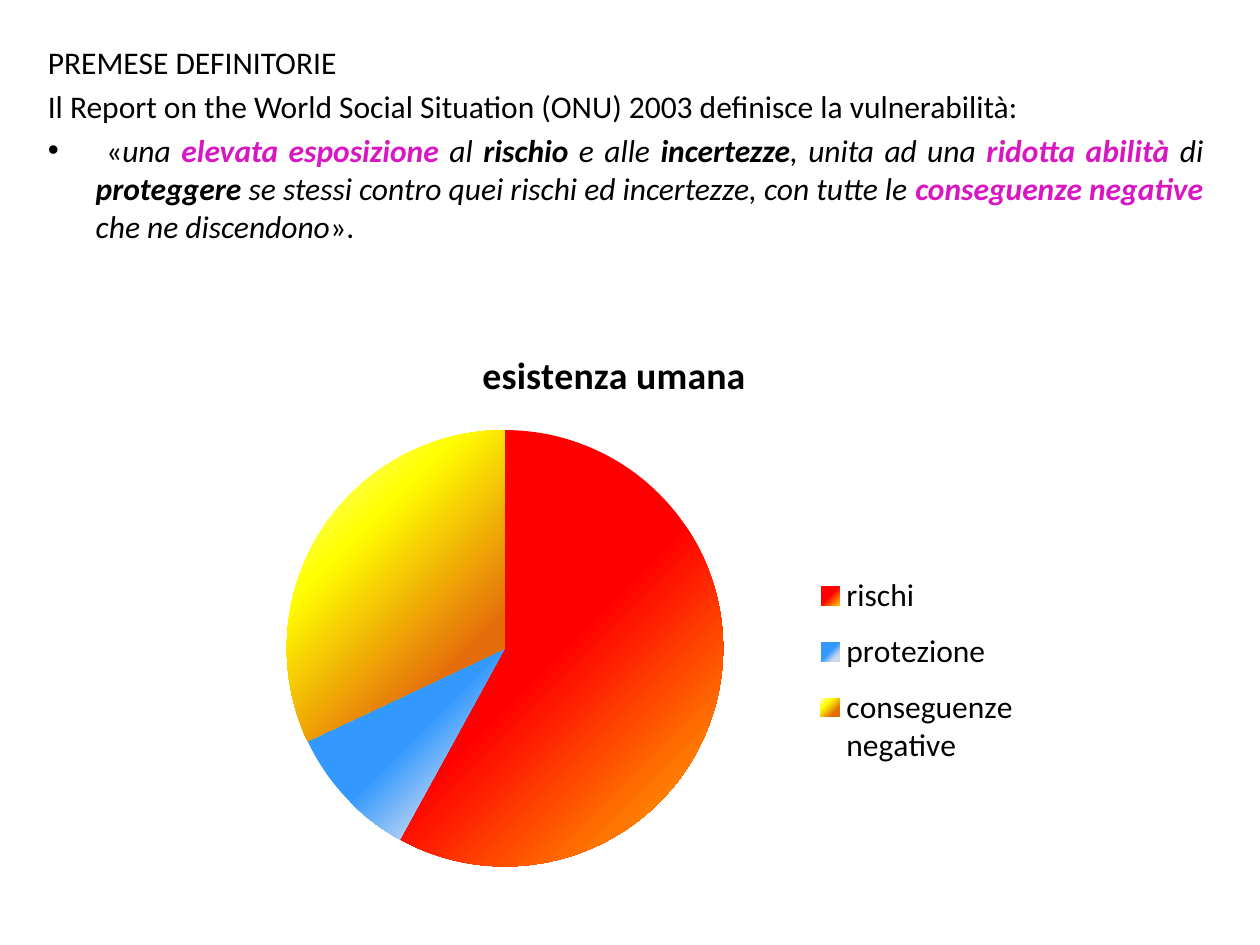
from lxml import etree
from pptx import Presentation
from pptx.chart.data import CategoryChartData
from pptx.dml.color import RGBColor
from pptx.enum.chart import XL_CHART_TYPE, XL_LEGEND_POSITION
from pptx.enum.text import MSO_ANCHOR, MSO_AUTO_SIZE, PP_ALIGN
from pptx.oxml.ns import qn
from pptx.util import Inches, Pt

PIE = XL_CHART_TYPE.PIE
RIGHT = XL_LEGEND_POSITION.RIGHT
JUSTIFY = PP_ALIGN.JUSTIFY
TOP = MSO_ANCHOR.TOP
NO_AUTOFIT = MSO_AUTO_SIZE.NONE

FONT = "Calibri"
BLACK = RGBColor(0x00, 0x00, 0x00)
MAGENTA = RGBColor(0xD9, 0x17, 0xC2)
RED = RGBColor(0xFF, 0x00, 0x00)
AMBER = RGBColor(0xFF, 0xC0, 0x00)
BLUE = RGBColor(0x33, 0x99, 0xFF)
PALE_BLUE = RGBColor(0xC6, 0xD9, 0xF1)
PALE_YELLOW = RGBColor(0xFF, 0xFF, 0x99)
YELLOW = RGBColor(0xFF, 0xFF, 0x00)
ORANGE = RGBColor(0xE4, 0x6C, 0x0A)

# Run styles: (italic, bold, colour)
PLAIN = (False, False, BLACK)
QUOTE = (True, False, BLACK)
STRONG = (True, True, BLACK)
KEY = (True, True, MAGENTA)

HEADING = [("PREMESE DEFINITORIE", PLAIN)]
INTRO = [("Il Report on the World Social Situation (ONU) 2003 definisce la vulnerabilità:", PLAIN)]
DEFINITION = [
    (" «", PLAIN),
    ("una ", QUOTE),
    ("elevata esposizione ", KEY),
    ("al ", QUOTE),
    ("rischio", STRONG),
    (" e alle ", QUOTE),
    ("incertezze", STRONG),
    (", unita ad una ", QUOTE),
    ("ridotta abilità ", KEY),
    ("di ", QUOTE),
    ("proteggere", STRONG),
    (" se stessi contro quei rischi ed incertezze, con tutte le ", QUOTE),
    ("conseguenze negative", KEY),
    (" che ne discendono", QUOTE),
    ("».", PLAIN),
]

CHART_TITLE = "esistenza umana"
# Slices: category, value, gradient stops (percent, colour)
SLICES = [
    ("rischi", 58, [(50, RED), (100, AMBER)]),
    ("protezione", 10, [(50, BLUE), (79, PALE_BLUE)]),
    ("conseguenze negative", 32, [(7, PALE_YELLOW), (33, YELLOW), (77, ORANGE)]),
]


def style_font(font, size, bold=False, italic=False, color=BLACK):
    font.name = FONT
    font.size = Pt(size)
    font.bold = bold
    font.italic = italic
    font.color.rgb = color


def set_bullet(paragraph, bullet):
    props = paragraph._p.get_or_add_pPr()
    indent = Inches(0.38) if bullet else 0
    props.set("marL", str(indent))
    props.set("indent", str(-indent))
    if bullet:
        etree.SubElement(props, qn("a:buFont"), typeface="Arial")
        etree.SubElement(props, qn("a:buChar"), char=bullet)
    else:
        etree.SubElement(props, qn("a:buNone"))


def fill_definition(body, left, top, width, height):
    body.left, body.top, body.width, body.height = left, top, width, height
    frame = body.text_frame
    frame.word_wrap = True
    frame.auto_size = NO_AUTOFIT
    frame.vertical_anchor = TOP
    for i, (runs, bullet) in enumerate([(HEADING, None), (INTRO, None), (DEFINITION, "•")]):
        paragraph = frame.add_paragraph() if i else frame.paragraphs[0]
        paragraph.alignment = JUSTIFY
        paragraph.space_before = Pt(3.6)
        set_bullet(paragraph, bullet)
        for text, (italic, bold, color) in runs:
            run = paragraph.add_run()
            run.text = text
            style_font(run.font, 18, bold, italic, color)


def fill_gradient(fill, stop_list, stops):
    """Give the slice a diagonal gradient with any number of stops."""
    fill.gradient_angle = 315
    for stop in list(stop_list):
        stop_list.remove(stop)
    for percent, color in stops:
        stop = etree.SubElement(stop_list, qn("a:gs"), pos=str(percent * 1000))
        etree.SubElement(stop, qn("a:srgbClr"), val=str(color))


def set_layout(parent, after, x, y, w, h, inner=False):
    """Place a chart part by fractions of the chart box."""
    for old in parent.findall(qn("c:layout")):
        parent.remove(old)
    layout = etree.Element(qn("c:layout"))
    manual = etree.SubElement(layout, qn("c:manualLayout"))
    settings = [("xMode", "edge"), ("yMode", "edge"), ("x", x), ("y", y), ("w", w), ("h", h)]
    if inner:
        settings.insert(0, ("layoutTarget", "inner"))
    for tag, value in settings:
        etree.SubElement(manual, qn(f"c:{tag}"), val=str(value))
    if after is None:
        parent.insert(0, layout)
    else:
        after.addnext(layout)


def add_pie(slide, left, top, width, height):
    data = CategoryChartData()
    data.categories = [category for category, _, _ in SLICES]
    data.add_series(CHART_TITLE, [value for _, value, _ in SLICES])
    chart = slide.shapes.add_chart(PIE, left, top, width, height, data).chart
    style_font(chart.font, 18)

    # Title
    chart.has_title = True
    title = chart.chart_title.text_frame.paragraphs[0].add_run()
    title.text = CHART_TITLE
    style_font(title.font, 21.6, bold=True)
    chart.chart_title.include_in_layout = False

    # Legend
    chart.has_legend = True
    legend = chart.legend
    legend.position = RIGHT
    legend.include_in_layout = False
    style_font(legend.font, 18)
    set_layout(legend._element, legend._element.find(qn("c:legendPos")), 0.73, 0.42, 0.26, 0.4)

    # Slices
    plot = chart.plots[0]
    plot.vary_by_categories = True
    set_layout(plot._element.getparent(), None, 0.11, 0.19, 0.52, 0.78, inner=True)
    series = plot.series[0]
    for i, (_, _, stops) in enumerate(SLICES):
        fill = series.points[i].format.fill
        fill.gradient()
        stop_list = series._element.findall(f"{qn('c:dPt')}//{qn('a:gsLst')}")[i]
        fill_gradient(fill, stop_list, stops)


def main():
    prs = Presentation()
    prs.slide_width, prs.slide_height = Inches(10), Inches(7.5)
    slide = prs.slides.add_slide(prs.slide_layouts[1])
    empty_title = slide.shapes.title._element
    empty_title.getparent().remove(empty_title)
    fill_definition(slide.placeholders[1], Inches(0.28), Inches(0.29), Inches(9.37), Inches(7.01))
    add_pie(slide, Inches(1.54), Inches(2.57), Inches(6.67), Inches(4.44))
    prs.save("out.pptx")


if __name__ == "__main__":
    main()
